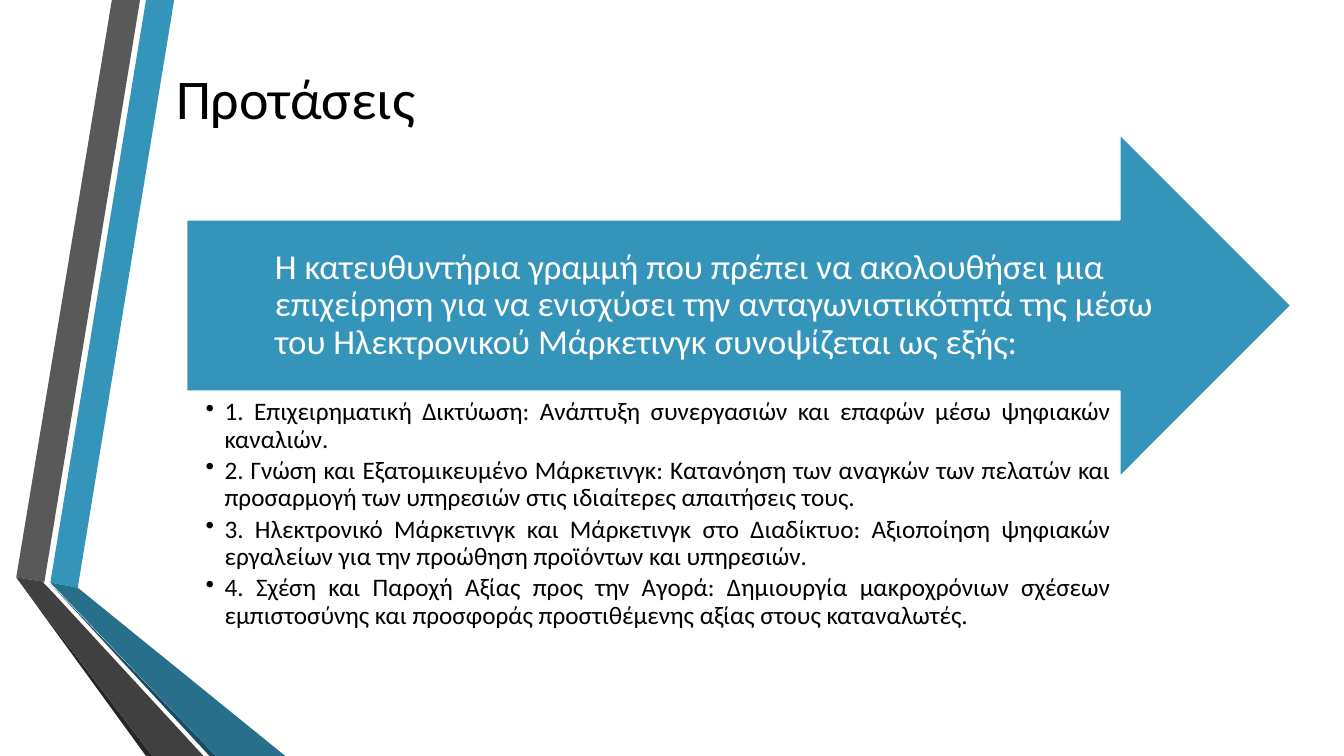
from lxml import etree
from pptx import Presentation
from pptx.dml.color import RGBColor
from pptx.enum.shapes import MSO_SHAPE
from pptx.enum.text import MSO_ANCHOR, PP_ALIGN
from pptx.oxml.ns import qn
from pptx.util import Cm, Pt

RIGHT_ARROW = MSO_SHAPE.RIGHT_ARROW
TOP, MIDDLE = MSO_ANCHOR.TOP, MSO_ANCHOR.MIDDLE
LEFT, JUSTIFY = PP_ALIGN.LEFT, PP_ALIGN.JUSTIFY

BLACK = RGBColor(0x00, 0x00, 0x00)
WHITE = RGBColor(0xFF, 0xFF, 0xFF)
BLUE = RGBColor(0x34, 0x94, 0xBA)
TEAL = RGBColor(0x27, 0x6F, 0x8B)
NAVY = RGBColor(0x1A, 0x4A, 0x5D)
GREY = RGBColor(0x59, 0x59, 0x59)
CHARCOAL = RGBColor(0x40, 0x40, 0x40)
SOOT = RGBColor(0x26, 0x26, 0x26)

FONT = "Calibri"
SLIDE_WIDTH, SLIDE_HEIGHT = 33.87, 19.05
BULLET_INDENT = Cm(0.48)

# Ribbon outlines in centimetres from the corner of the ribbon box
RIBBONS = [
    (BLUE, [(1.27, 14.68), (1.96, 14.81), (4.39, 0), (3.68, 0)]),
    (GREY, [(3.53, 0), (2.82, 0), (0.41, 14.55), (1.12, 14.66)]),
    (SOOT, [(0.41, 14.55), (3.68, 19.05), (3.84, 19.05)]),
    (NAVY, [(1.27, 14.71), (5.28, 19.05), (5.44, 19.05)]),
    (TEAL, [(1.27, 14.68), (5.44, 19.05), (7.19, 19.05), (1.96, 14.81)]),
    (CHARCOAL, [(5.13, 19.05), (1.22, 14.81), (1.09, 14.68), (1.12, 14.66),
                (0.41, 14.55), (3.84, 19.05)]),
]

TITLE = "Προτάσεις"
GUIDELINE = (
    "Η κατευθυντήρια γραμμή που πρέπει να ακολουθήσει μια επιχείρηση για να "
    "ενισχύσει την ανταγωνιστικότητά της μέσω του Ηλεκτρονικού Μάρκετινγκ "
    "συνοψίζεται ως εξής:"
)
PROPOSALS = [
    "1. Επιχειρηματική Δικτύωση: Ανάπτυξη συνεργασιών και επαφών μέσω "
    "ψηφιακών καναλιών.",
    "2. Γνώση και Εξατομικευμένο Μάρκετινγκ: Κατανόηση των αναγκών των πελατών "
    "και προσαρμογή των υπηρεσιών στις ιδιαίτερες απαιτήσεις τους.",
    "3. Ηλεκτρονικό Μάρκετινγκ και Μάρκετινγκ στο Διαδίκτυο: Αξιοποίηση "
    "ψηφιακών εργαλείων για την προώθηση προϊόντων και υπηρεσιών.",
    "4. Σχέση και Παροχή Αξίας προς την Αγορά: Δημιουργία μακροχρόνιων σχέσεων "
    "εμπιστοσύνης και προσφοράς προστιθέμενης αξίας στους καταναλωτές.",
]


def set_values(target, values):
    for name, value in values.items():
        setattr(target, name, value)


def add_bullet(para):
    properties = para._p.get_or_add_pPr()
    properties.set("marL", str(BULLET_INDENT))
    properties.set("indent", str(-BULLET_INDENT))
    etree.SubElement(properties, qn("a:buChar")).set("char", "•")


def add_text(slide, box, texts, size, color, frame_format, para_format,
             bulleted=False):
    frame = slide.shapes.add_textbox(*map(Cm, box)).text_frame
    set_values(frame, {"word_wrap": True, **frame_format})
    for index, text in enumerate(texts):
        para = frame.add_paragraph() if index else frame.paragraphs[0]
        if bulleted:
            add_bullet(para)
        set_values(para, para_format)
        span = para.add_run()
        span.text = text
        set_values(span.font, {"name": FONT, "size": Pt(size)})
        span.font.color.rgb = color


def add_ribbons(slide, box):
    left, top = box[:2]
    for color, outline in RIBBONS:
        points = [(Cm(left + x), Cm(top + y)) for x, y in outline]
        builder = slide.shapes.build_freeform(*points[0])
        builder.add_line_segments(points[1:], close=True)
        ribbon = builder.convert_to_shape()
        ribbon.shadow.inherit = False
        ribbon.fill.solid()
        ribbon.fill.fore_color.rgb = color
        ribbon.line.fill.background()


def add_title(slide, box):
    add_text(slide, box, [TITLE], 40, BLACK,
             {"vertical_anchor": MIDDLE}, {"alignment": LEFT})


def add_arrow_panel(slide, box):
    """Arrow filling the box, its guideline, and the proposals below its shaft."""
    left, top, width, height = box
    arrow = slide.shapes.add_shape(RIGHT_ARROW, *map(Cm, box))
    arrow.shadow.inherit = False
    arrow.fill.solid()
    arrow.fill.fore_color.rgb = BLUE
    arrow.line.color.rgb = WHITE
    arrow.line.width = Pt(1.25)

    text_width = 22.81
    no_margins = dict.fromkeys(
        ["margin_left", "margin_top", "margin_right", "margin_bottom"], 0)
    add_text(slide, (left + 0.48, top + 6.68, text_width, 6.58),
             PROPOSALS, 18, BLACK,
             {**no_margins, "vertical_anchor": TOP},
             {"alignment": JUSTIFY, "line_spacing": 0.9, "space_after": Pt(3)},
             bulleted=True)
    add_text(slide, (left + 2.23, top + height / 4, text_width, height / 2),
             [GUIDELINE], 25, WHITE,
             {**no_margins, "vertical_anchor": MIDDLE,
              "margin_top": Cm(0.71), "margin_bottom": Cm(0.71)},
             {"alignment": LEFT, "line_spacing": 0.9})


def main():
    deck = Presentation()
    deck.slide_width, deck.slide_height = Cm(SLIDE_WIDTH), Cm(SLIDE_HEIGHT)
    slide = deck.slides.add_slide(deck.slide_layouts[6])
    add_ribbons(slide, (0, 0, 7.19, SLIDE_HEIGHT))
    add_title(slide, (4.19, 0, 27.84, 4.88))
    add_arrow_panel(slide, (4.7, 3.38, 27.84, 8.64))
    deck.save("out.pptx")


if __name__ == "__main__":
    main()
